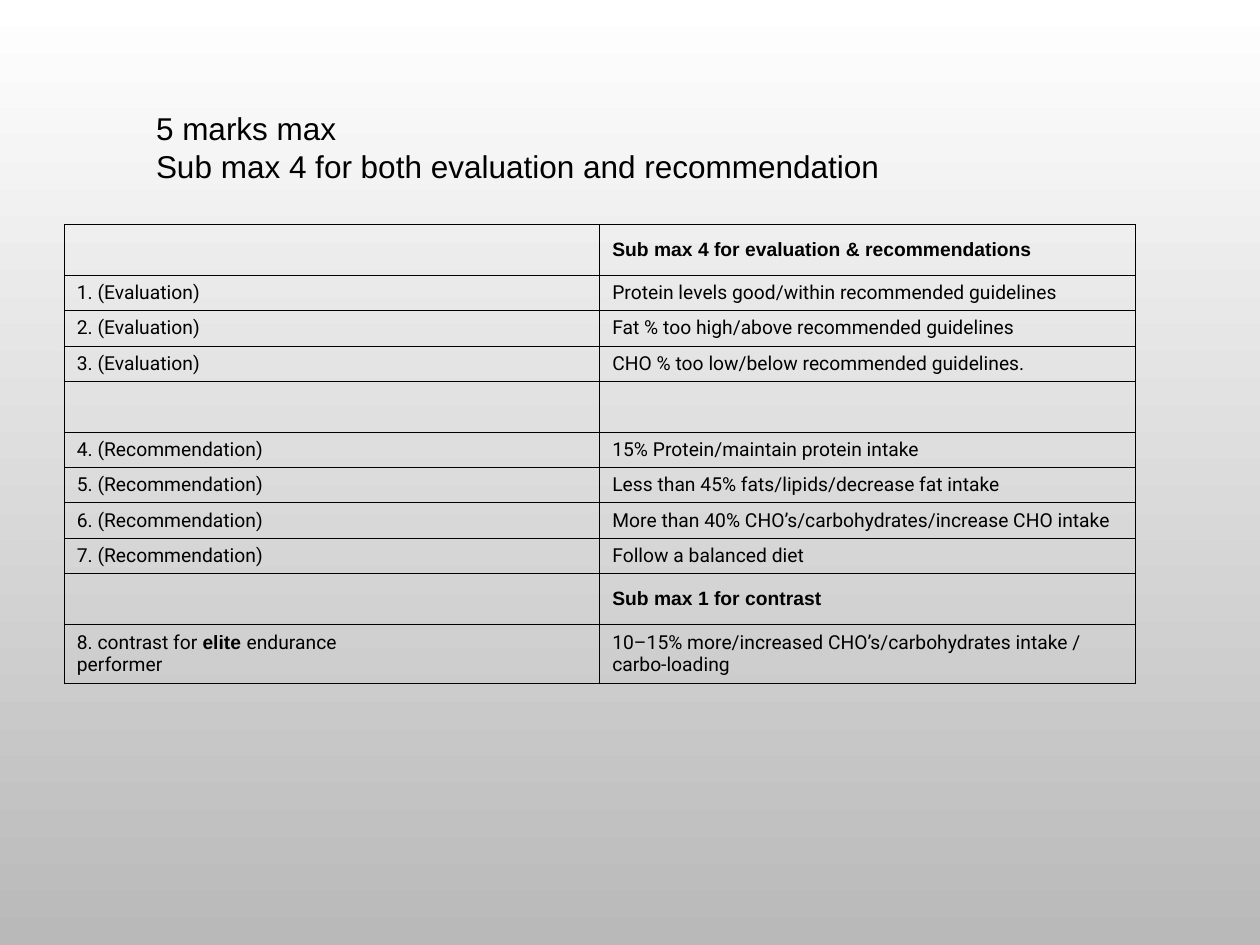
from lxml.etree import SubElement
from pptx import Presentation
from pptx.dml.color import RGBColor
from pptx.enum.text import MSO_ANCHOR, MSO_AUTO_SIZE
from pptx.oxml.ns import qn
from pptx.util import Inches, Pt

BLACK = RGBColor(0x00, 0x00, 0x00)
WHITE = RGBColor(0xFF, 0xFF, 0xFF)
GREY = RGBColor(0xB9, 0xB9, 0xB9)

HEADING_HEIGHT, ROW_HEIGHT, CONTRAST_HEIGHT = 0.4, 0.28, 0.47

# Each row: height, left cell, right cell. A line of a cell may hold **bold** parts.
MARK_SCHEME = [
    (HEADING_HEIGHT, "", "**Sub max 4 for evaluation & recommendations**"),
    (ROW_HEIGHT, "1. (Evaluation)", "Protein levels good/within recommended guidelines"),
    (ROW_HEIGHT, "2. (Evaluation)", "Fat % too high/above recommended guidelines"),
    (ROW_HEIGHT, "3. (Evaluation)", "CHO % too low/below recommended guidelines."),
    (HEADING_HEIGHT, "", ""),
    (ROW_HEIGHT, "4. (Recommendation)", "15% Protein/maintain protein intake"),
    (ROW_HEIGHT, "5. (Recommendation)", "Less than 45% fats/lipids/decrease fat intake"),
    (ROW_HEIGHT, "6. (Recommendation)", "More than 40% CHO’s/carbohydrates/increase CHO intake"),
    (ROW_HEIGHT, "7. (Recommendation)", "Follow a balanced diet"),
    (HEADING_HEIGHT, "", "**Sub max 1 for contrast**"),
    (CONTRAST_HEIGHT, "8. contrast for **elite **endurance\nperformer",
     "10–15% more/increased CHO’s/carbohydrates intake / carbo-loading"),
]


def add_span(para, text, font_name, size, bold=False):
    span = para.add_run()
    span.text = text
    span.font.name = font_name
    span.font.size = Pt(size)
    span.font.bold = bold
    span.font.color.rgb = BLACK


def add_borders(cell):
    properties = cell._tc.get_or_add_tcPr()
    for side in ("a:lnL", "a:lnR", "a:lnT", "a:lnB"):
        line = SubElement(properties, qn(side), w=str(Pt(0.48)))
        fill = SubElement(line, qn("a:solidFill"))
        SubElement(fill, qn("a:srgbClr"), val=str(BLACK))


deck = Presentation()
deck.slide_width = Inches(10)
deck.slide_height = Inches(7.5)
page = deck.slides.add_slide(deck.slide_layouts[6])

background = page.background.fill
background.gradient()
background.gradient_angle = 270
for stop, color, position in zip(background.gradient_stops, (WHITE, GREY), (0, 1)):
    stop.color.rgb = color
    stop.position = position

# Mark scheme table
table_height = sum(height for height, _, _ in MARK_SCHEME)
table = page.shapes.add_table(len(MARK_SCHEME), 2, Inches(0.51), Inches(1.78),
                              Inches(8.5), Inches(table_height)).table
table.first_row = False
table.horz_banding = False
for row, (height, *texts) in zip(table.rows, MARK_SCHEME):
    row.height = Inches(height)
    for cell, text in zip(row.cells, texts):
        add_borders(cell)
        cell.fill.background()
        cell.vertical_anchor = MSO_ANCHOR.MIDDLE
        for number, line in enumerate(text.split("\n")):
            frame = cell.text_frame
            para = frame.add_paragraph() if number else frame.paragraphs[0]
            for index, part in enumerate(line.split("**")):
                bold = index % 2 == 1
                if part:
                    add_span(para, part, "Arial" if bold else "Roboto", 11, bold)

# Heading
box = page.shapes.add_textbox(Inches(1.14), Inches(0.81), Inches(7.17), Inches(0.71))
frame = box.text_frame
frame.word_wrap = True
frame.auto_size = MSO_AUTO_SIZE.SHAPE_TO_FIT_TEXT
frame.vertical_anchor = MSO_ANCHOR.MIDDLE
para = frame.paragraphs[0]
add_span(para, "5 marks max", "Arial", 18)
para.add_line_break()
add_span(para, "Sub max 4 for both evaluation and recommendation", "Arial", 18)

deck.save("out.pptx")
